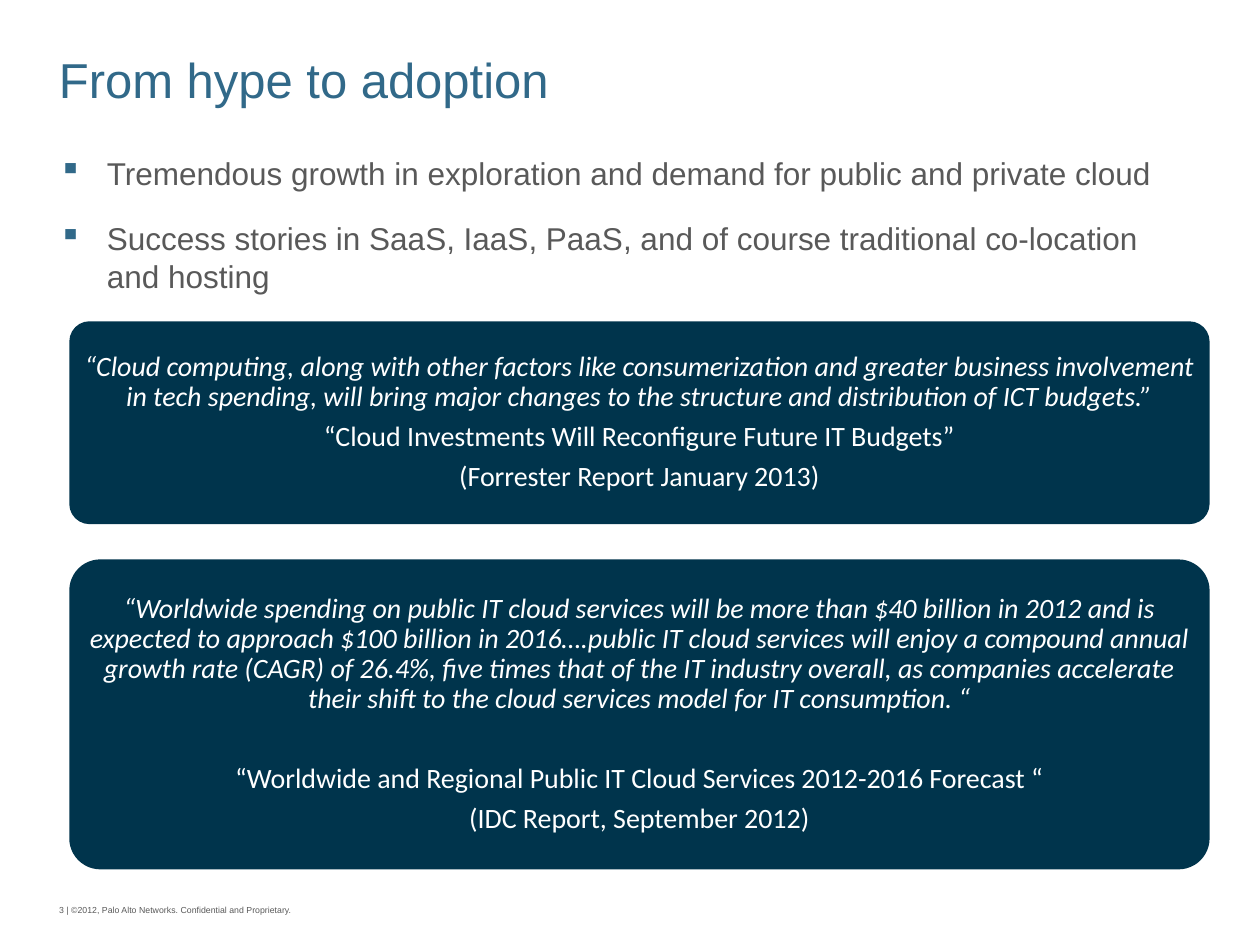
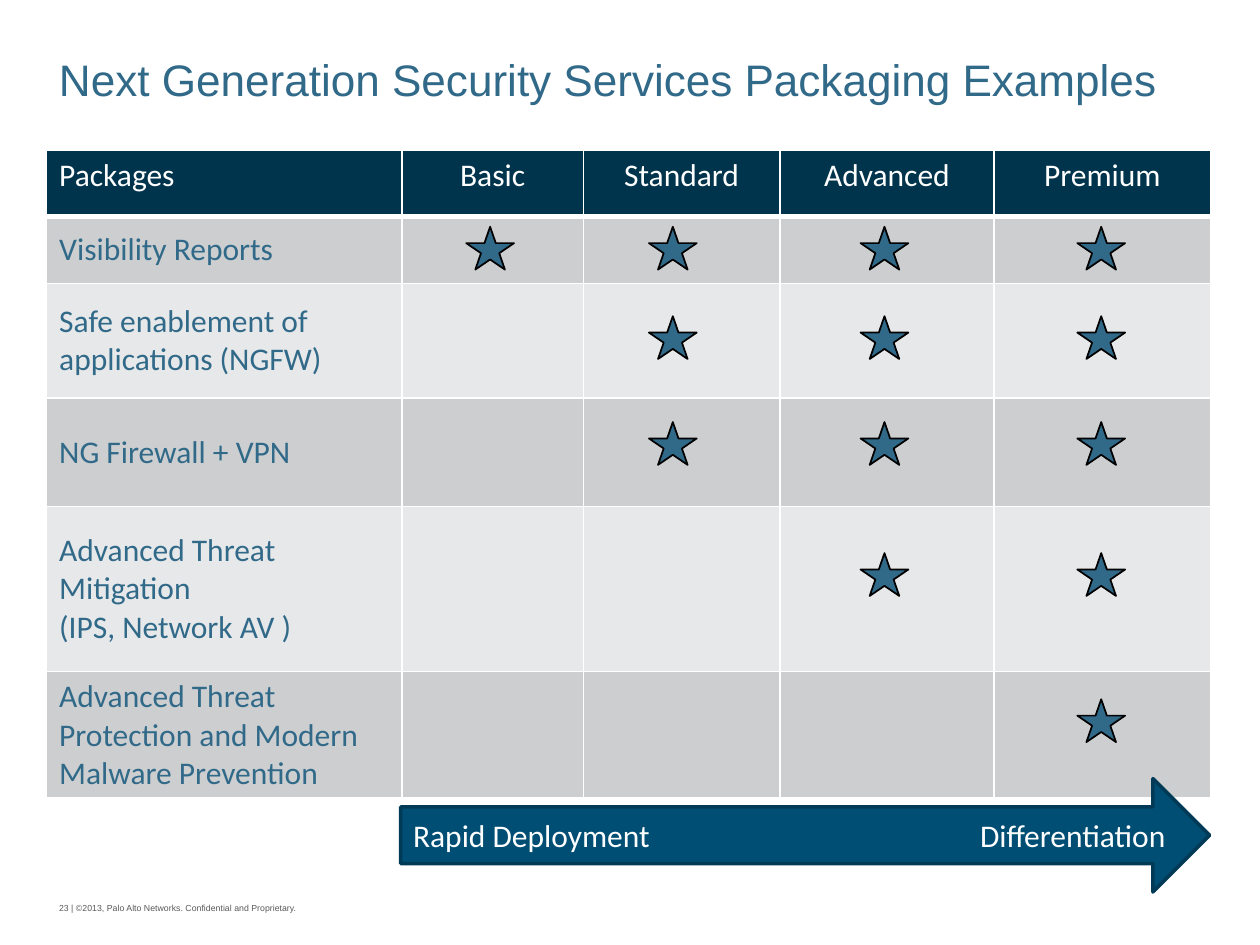
from dataclasses import dataclass

from lxml import etree
from pptx import Presentation, util as u
from pptx.dml.color import RGBColor
from pptx.enum import shapes, text
from pptx.oxml import ns

COLUMNS, ROWS = 100, 75
LEFT, WIDTH = 3.7, 92.3
MIDDLE = text.MSO_ANCHOR.MIDDLE
TOP = text.MSO_ANCHOR.TOP
CENTER = text.PP_ALIGN.CENTER


@dataclass(frozen=True)
class Theme:
    heading_font: str = "Arial"
    content_font: str = "Calibri"
    accent: str = "316989"
    navy: str = "00344C"
    arrow: str = "004E74"
    arrow_line: str = "003A56"
    gray: str = "595959"
    white: str = "FFFFFF"
    black: str = "000000"
    bands: tuple = ("CCCED0", "E7E8E9")
    title_size: float = 28
    body_size: float = 18
    quote_size: float = 16
    footer_size: float = 5


def color(value):
    return RGBColor.from_string(value)


def add_element(parent, tag, **attributes):
    return etree.SubElement(parent, ns.qn(tag), attributes)


def write(frame, content, *, font, size, ink, align=None, anchor=TOP, inset=None,
          bullet=None, tab=None, before=0, after=0, line_spacing=None, italic_first=False):
    """Fill a text frame, one paragraph per line; after is one gap or a list of gaps."""
    frame.word_wrap = True
    frame.vertical_anchor = anchor
    if inset is not None:
        frame.margin_left = frame.margin_right = u.Inches(inset)
        frame.margin_top = frame.margin_bottom = u.Inches(inset)
    lines = content.split("\n")
    gaps = after if isinstance(after, list) else [after] * len(lines)
    for index, (line, gap) in enumerate(zip(lines, gaps)):
        para = frame.add_paragraph() if index else frame.paragraphs[0]
        para.alignment = align
        para.line_spacing = line_spacing
        para.space_before = u.Pt(before if index else 0)
        para.space_after = u.Pt(gap)
        properties = para._p.get_or_add_pPr()
        if bullet:
            indent = u.Inches(0.38)
            properties.set("marL", str(indent))
            properties.set("indent", str(-indent))
            add_element(add_element(properties, "a:buClr"), "a:srgbClr", val=bullet)
            add_element(properties, "a:buChar", char="▪")
        if tab:
            stops = add_element(properties, "a:tabLst")
            add_element(stops, "a:tab", pos=str(tab), algn="l")
        span = para.add_run()
        span.text = line
        span.font.name = font
        span.font.size = u.Pt(size)
        span.font.color.rgb = color(ink)
        span.font.italic = italic_first and index == 0


def set_borders(cell, ink, bottom=1):
    properties = cell._tc.get_or_add_tcPr()
    for side, width in zip("LRTB", (1, 1, 1, bottom)):
        line = add_element(properties, f"a:ln{side}", w=str(u.Pt(width)))
        add_element(add_element(line, "a:solidFill"), "a:srgbClr", val=ink)


class SlideBuilder:
    """Draws themed elements on the current page; lengths are grid columns and rows."""

    def __init__(self, deck, theme):
        self.deck, self.theme = deck, theme
        self.page = None

    def x(self, columns):
        return round(self.deck.slide_width * columns / COLUMNS)

    def y(self, rows):
        return round(self.deck.slide_height * rows / ROWS)

    def area(self, left, top, width, height):
        return self.x(left), self.y(top), self.x(width), self.y(height)

    def start(self, title, footer, title_size=None, footer_top=70.1):
        theme = self.theme
        self.page = self.deck.slides.add_slide(self.deck.slide_layouts[6])
        self.label(title, (LEFT, 3, WIDTH, 6.6), size=title_size or theme.title_size,
                   ink=theme.accent, anchor=MIDDLE)
        self.label(footer, (LEFT, footer_top, 29.5, 4), size=theme.footer_size,
                   ink=theme.gray, anchor=MIDDLE)

    def label(self, content, area, **style):
        box = self.page.shapes.add_textbox(*self.area(*area))
        write(box.text_frame, content, font=self.theme.heading_font, **style)

    def bullets(self, content, area):
        self.label(content, area, size=self.theme.body_size, ink=self.theme.gray,
                   bullet=self.theme.accent, before=16)

    def shape(self, kind, area, fill, line=None, line_width=1):
        shape = self.page.shapes.add_shape(kind, *self.area(*area))
        shape.shadow.inherit = False
        shape.fill.solid()
        shape.fill.fore_color.rgb = color(fill)
        if line:
            shape.line.color.rgb = color(line)
            shape.line.width = u.Pt(line_width)
        else:
            shape.line.fill.background()
        return shape

    def quote(self, content, top, height, after):
        theme = self.theme
        card = self.shape(shapes.MSO_SHAPE.ROUNDED_RECTANGLE, (5.5, top, 90.5, height),
                          theme.navy)
        card.adjustments[0] = 0.1
        write(card.text_frame, content, font=theme.content_font, size=theme.quote_size,
              ink=theme.white, align=CENTER, anchor=MIDDLE, inset=0.07, after=after,
              line_spacing=0.9, italic_first=True)

    def table(self, rows, top, widths, heights):
        theme = self.theme
        frame = self.page.shapes.add_table(
            len(rows), len(widths), *self.area(LEFT, top, sum(widths), sum(heights)))
        table = frame.table
        for column, width in zip(table.columns, widths):
            column.width = self.x(width)
        for row, height in zip(table.rows, heights):
            row.height = self.y(height)
        for r, values in enumerate(rows):
            header = r == 0
            for c, value in enumerate(values):
                cell = table.cell(r, c)
                set_borders(cell, theme.white, bottom=3 if header else 1)
                cell.fill.solid()
                cell.fill.fore_color.rgb = color(
                    theme.navy if header else theme.bands[(r - 1) % 2])
                if value:
                    write(cell.text_frame, value, font=theme.content_font,
                          size=theme.body_size, ink=theme.white if header else theme.accent,
                          align=CENTER if c else None)
                    cell.vertical_anchor = TOP if header else MIDDLE

    def star(self, center, top):
        width, height = 3.8, 3.4
        self.shape(shapes.MSO_SHAPE.STAR_5_POINT,
                   (center - width / 2, top, width, height),
                   self.theme.accent, self.theme.black)

    def arrow(self, content, area, tab):
        theme = self.theme
        arrow = self.shape(shapes.MSO_SHAPE.RIGHT_ARROW, area, theme.arrow,
                           theme.arrow_line, line_width=2)
        write(arrow.text_frame, content, font=theme.content_font, size=theme.body_size,
              ink=theme.white, align=text.PP_ALIGN.LEFT, anchor=MIDDLE, tab=self.x(tab))


def build_adoption(builder):
    builder.start("From hype to adoption",
                  "3 | ©2012, Palo Alto Networks. Confidential and Proprietary.",
                  footer_top=70.2)
    builder.bullets(
        "Tremendous growth in exploration and demand for public and private cloud\n"
        "Success stories in SaaS, IaaS, PaaS, and of course traditional co-location "
        "and hosting", (LEFT, 11.7, WIDTH, 13))
    builder.quote(
        "“Cloud computing, along with other factors like consumerization and greater "
        "business involvement in tech spending, will bring major changes to the structure "
        "and distribution of ICT budgets.”\n"
        "“Cloud Investments Will Reconfigure Future IT Budgets”\n"
        "(Forrester Report January 2013)", 25.5, 16.1, 5.6)
    builder.quote(
        "“Worldwide spending on public IT cloud services will be more than $40 billion in "
        "2012 and is expected to approach $100 billion in 2016….public IT cloud services "
        "will enjoy a compound annual growth rate (CAGR) of 26.4%, five times that of the "
        "IT industry overall, as companies accelerate their shift to the cloud services "
        "model for IT consumption. “\n"
        "“Worldwide and Regional Public IT Cloud Services 2012-2016 Forecast “\n"
        "(IDC Report, September 2012)", 44.4, 24.6, [28.5, 5.6, 5.6])


def build_packages(builder):
    builder.start("Next Generation Security Services Packaging Examples",
                  "23 | ©2013, Palo Alto Networks. Confidential and Proprietary.",
                  title_size=25.2)
    tiers = ["Basic", "Standard", "Advanced", "Premium"]
    star_centers = [38.9, 53.4, 70.2, 87.4]
    # Each service: name, row height, star top, first tier that includes it
    services = [
        ("Visibility Reports", 5.3, 18, 0),
        ("Safe enablement of applications (NGFW)", 9.1, 25.1, 1),
        ("NG Firewall + VPN", 8.6, 33.5, 1),
        ("Advanced Threat Mitigation\n(IPS, Network AV )", 13.1, 43.9, 2),
        ("Advanced Threat Protection and Modern Malware Prevention", 9.1, 55.5, 3),
    ]
    rows = [["Packages", *tiers]]
    rows += [[name] + [""] * len(tiers) for name, *_ in services]
    builder.table(rows, 11.9, [28.2, 14.4, 15.6, 17, 17.2],
                  [5.3] + [height for _, height, *_ in services])
    for _, _, top, first_tier in services:
        for center in star_centers[first_tier:]:
            builder.star(center, top)
    builder.arrow("Rapid Deployment\tDifferentiation", (31.8, 61.8, 64.2, 9), tab=45)


def main():
    deck = Presentation()
    deck.slide_width, deck.slide_height = u.Inches(10), u.Inches(7.5)
    builder = SlideBuilder(deck, Theme())
    build_adoption(builder)
    build_packages(builder)
    deck.save("out.pptx")


if __name__ == "__main__":
    main()
